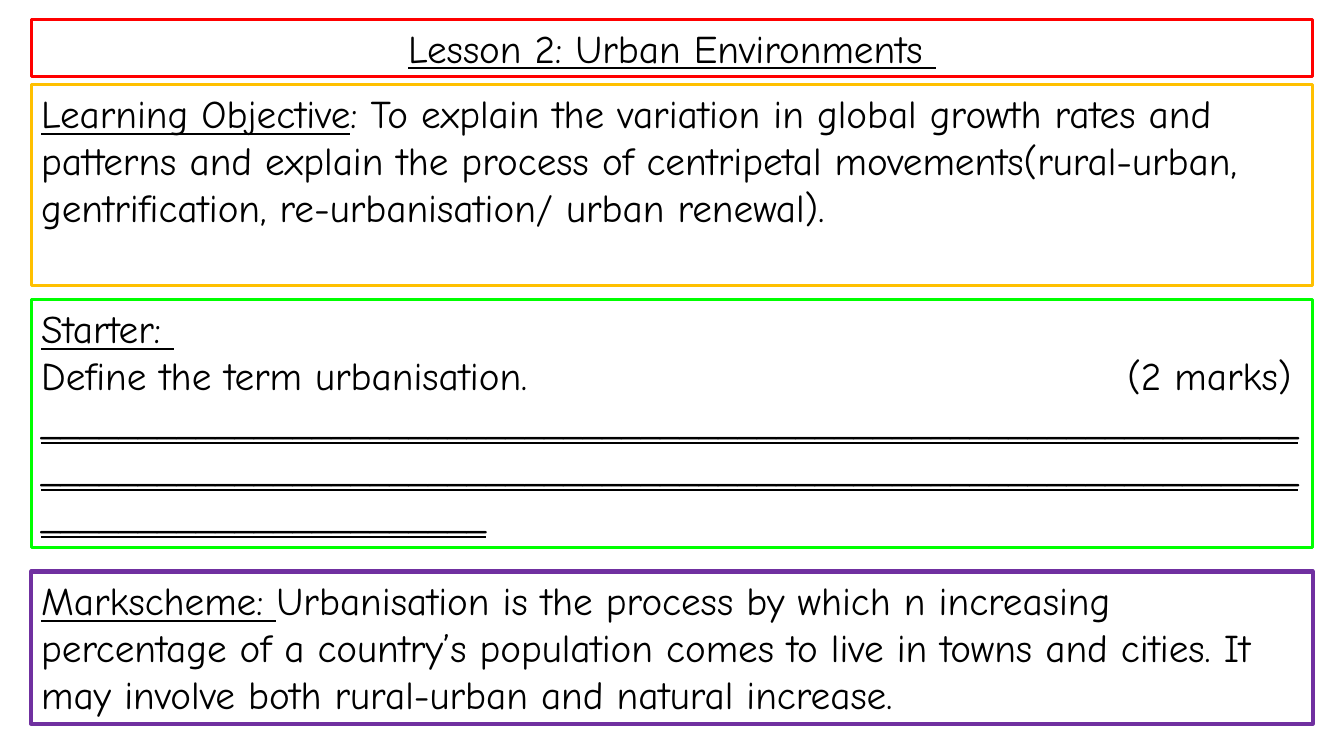
from dataclasses import dataclass

from pptx import Presentation
from pptx.dml.color import RGBColor
from pptx.enum.shapes import MSO_SHAPE
from pptx.enum.text import MSO_ANCHOR, PP_ALIGN
from pptx.util import Inches, Pt
from lxml import etree

RECT = MSO_SHAPE.RECTANGLE
TOP = MSO_ANCHOR.TOP
LEFT, CENTER = PP_ALIGN.LEFT, PP_ALIGN.CENTER

BLACK = RGBColor(0x00, 0x00, 0x00)
RED = RGBColor(0xFF, 0x00, 0x00)
AMBER = RGBColor(0xFF, 0xC0, 0x00)
GREEN = RGBColor(0x00, 0xFF, 0x00)
PURPLE = RGBColor(0x70, 0x30, 0xA0)

FONT = "Comic Neue"
SIZE = Pt(28)
BOX_X, BOX_W = 0.31, 12.71
MARK_TAB = 12.4


@dataclass
class Line:
    head: str = ""  # underlined
    body: str = ""


@dataclass
class Box:
    top: float
    height: float
    color: RGBColor
    lines: list[Line]
    width: float = 2.25
    align: PP_ALIGN = LEFT


BOXES = [
    Box(0.19, 0.57, RED, [Line("Lesson 2: Urban Environments ")], align=CENTER),
    Box(0.84, 1.99, AMBER, [Line(
        "Learning Objective",
        ": To explain the variation in global growth rates and patterns and "
        "explain the process of centripetal movements(rural-urban, "
        "gentrification, re-urbanisation/ urban renewal).")]),
    Box(2.97, 2.46, GREEN, [
        Line("Starter: "),
        Line(body="Define the term urbanisation.\t(2 marks)"),
        Line("_" * 153)]),
    Box(5.67, 1.51, PURPLE, [Line(
        "Markscheme: ",
        "Urbanisation is the process by which n increasing percentage of a "
        "country’s population comes to live in towns and cities. It may "
        "involve both rural-urban and natural increase.")], width=3),
]


def add_tab(para, pos: float) -> None:
    """Add a right-aligned tab stop."""
    props = para._p.get_or_add_pPr()
    space = props.nsmap["a"]
    tabs = etree.SubElement(props, f"{{{space}}}tabLst")
    etree.SubElement(tabs, f"{{{space}}}tab", pos=str(Inches(pos)), algn="r")


def add_text(para, line: Line, align: PP_ALIGN) -> None:
    para.alignment = align
    if "\t" in line.body:
        add_tab(para, MARK_TAB)
    for text, under in ((line.head, True), (line.body, False)):
        if text:
            run = para.add_run()
            run.text = text
            font = run.font
            font.name, font.size, font.underline = FONT, SIZE, under
            font.color.rgb = BLACK


def add_box(slide, box: Box) -> None:
    shape = slide.shapes.add_shape(
        RECT, Inches(BOX_X), Inches(box.top), Inches(BOX_W), Inches(box.height))
    shape.shadow.inherit = False
    shape.fill.background()
    shape.line.color.rgb = box.color
    shape.line.width = Pt(box.width)
    frame = shape.text_frame
    frame.word_wrap = True
    frame.vertical_anchor = TOP
    for i, line in enumerate(box.lines):
        para = frame.add_paragraph() if i else frame.paragraphs[0]
        add_text(para, line, box.align)


def main() -> None:
    deck = Presentation()
    deck.slide_width, deck.slide_height = Inches(13.33), Inches(7.5)
    slide = deck.slides.add_slide(deck.slide_layouts[6])
    # Lesson boxes, top to bottom
    for box in BOXES:
        add_box(slide, box)
    deck.save("out.pptx")


if __name__ == "__main__":
    main()
